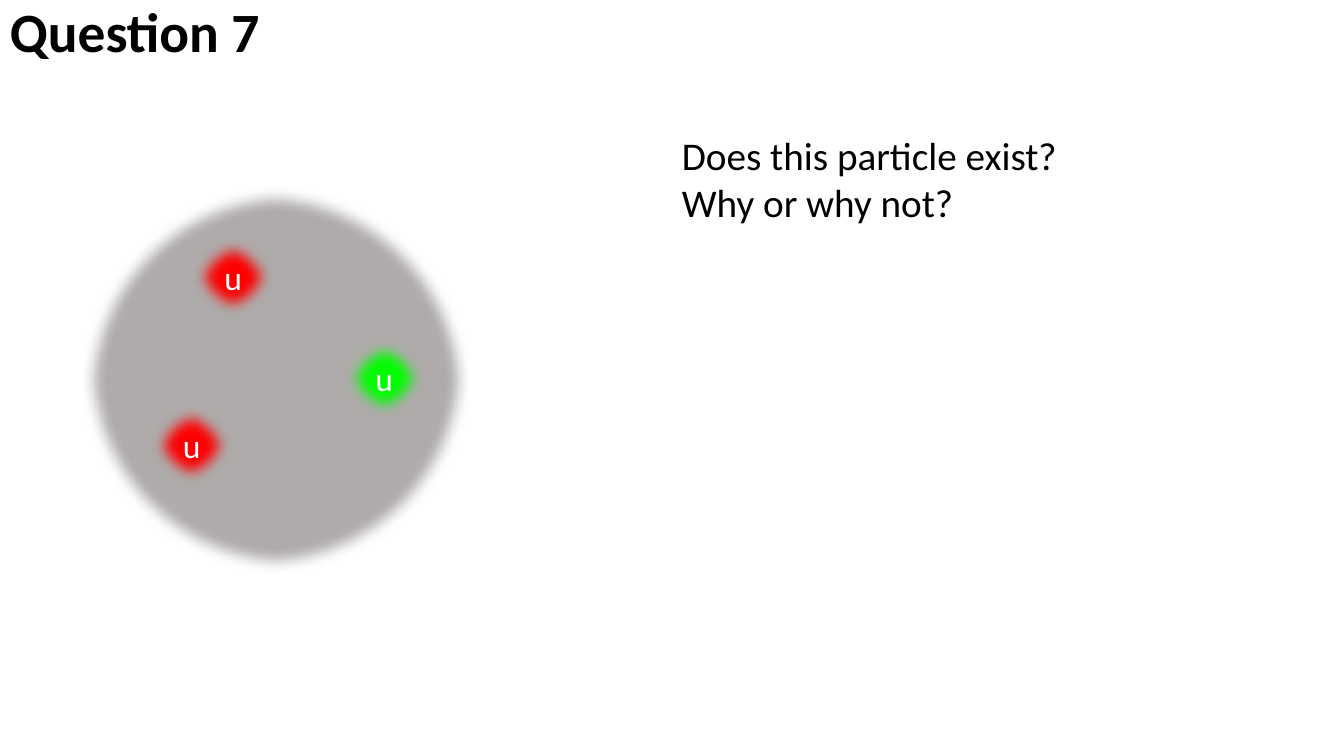
from pptx import Presentation
from pptx.dml.color import RGBColor
from pptx.enum.shapes import MSO_SHAPE
from pptx.enum.text import MSO_ANCHOR, MSO_AUTO_SIZE, PP_ALIGN
from pptx.oxml.ns import qn
from pptx.util import Pt
from lxml.etree import SubElement


def add_span(para, text, size, color, bold=False):
    span = para.add_run()
    span.text = text
    span.font.name = "Calibri"
    span.font.size = Pt(size)
    span.font.bold = bold
    span.font.color.rgb = RGBColor.from_string(color)


def add_soft_circle(page, left, top, width, height, color):
    circle = page.shapes.add_shape(MSO_SHAPE.OVAL, Pt(left), Pt(top), Pt(width), Pt(height))
    circle.fill.solid()
    circle.fill.fore_color.rgb = RGBColor.from_string(color)
    circle.line.color.rgb = RGBColor.from_string("1E3256")
    circle.line.width = Pt(1)
    # Soft edge goes into the effect list that replaces the shadow
    circle.shadow.inherit = False
    effects = circle.element.spPr.find(qn("a:effectLst"))
    SubElement(effects, qn("a:softEdge"), rad=str(Pt(10)))
    return circle


deck = Presentation()
deck.slide_width, deck.slide_height = Pt(960), Pt(540)
page = deck.slides.add_slide(deck.slide_layouts[6])

# Title
title = page.shapes.add_textbox(Pt(0), Pt(0), Pt(828), Pt(49)).text_frame
title.word_wrap = True
title.vertical_anchor = MSO_ANCHOR.MIDDLE
title.paragraphs[0].line_spacing = 0.9
add_span(title.paragraphs[0], "Question 7", 39.6, "000000", bold=True)

# Particle
add_soft_circle(page, 57, 132, 279, 277, "AFABAB")

# Quarks
for left, top, color in [(135.5, 168, "FF0000"), (106, 288, "FF0000"), (243.5, 240, "00FF00")]:
    quark = add_soft_circle(page, left, top, 62, 60, color).text_frame
    quark.vertical_anchor = MSO_ANCHOR.MIDDLE
    quark.paragraphs[0].alignment = PP_ALIGN.CENTER
    add_span(quark.paragraphs[0], "u", 24, "FFFFFF")

# Question
question = page.shapes.add_textbox(Pt(480), Pt(90), Pt(285), Pt(75)).text_frame
question.word_wrap = False
question.auto_size = MSO_AUTO_SIZE.SHAPE_TO_FIT_TEXT
for index, text in enumerate(["Does this particle exist?", "Why or why not?"]):
    para = question.add_paragraph() if index else question.paragraphs[0]
    add_span(para, text, 28, "000000")

deck.save("out.pptx")
